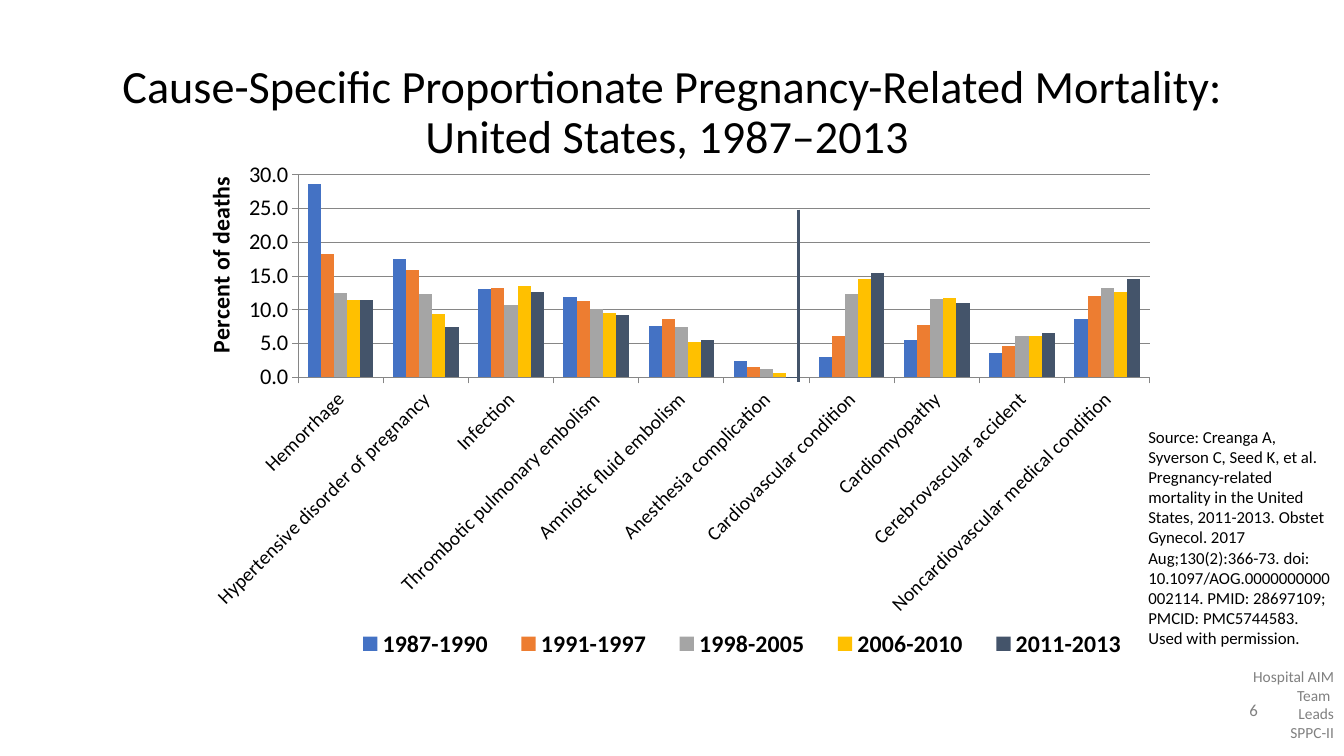
import lxml.etree
import pptx
import pptx.chart.data
import pptx.dml.color
import pptx.enum.chart
import pptx.enum.shapes
import pptx.enum.text
import pptx.oxml
import pptx.oxml.ns
import pptx.util

WIDTH, HEIGHT = pptx.util.Inches(13.33), pptx.util.Inches(7.5)
FONT = "Calibri"
COLORS = {"text": "000000", "muted": "808080", "grid": "868686", "divider": "44546A"}
ALIGN = pptx.enum.text.PP_ALIGN
MIDDLE = pptx.enum.text.MSO_ANCHOR.MIDDLE

CAUSES = [
    "Hemorrhage", "Hypertensive disorder of pregnancy", "Infection",
    "Thrombotic pulmonary embolism", "Amniotic fluid embolism",
    "Anesthesia complication", "Cardiovascular condition", "Cardiomyopathy",
    "Cerebrovascular accident", "Noncardiovascular medical condition",
]
PERIODS = {
    "1987-1990": ("4472C4", [28.7, 17.6, 13.1, 11.9, 7.6, 2.5, 3, 5.6, 3.6, 8.7]),
    "1991-1997": ("ED7D31", [18.2, 15.9, 13.2, 11.3, 8.6, 1.6, 6.2, 7.7, 4.7, 12]),
    "1998-2005": ("A5A5A5", [12.5, 12.3, 10.7, 10.2, 7.5, 1.2, 12.4, 11.6, 6.2, 13.2]),
    "2006-2010": ("FFC000", [11.4, 9.4, 13.6, 9.6, 5.3, 0.7, 14.6, 11.8, 6.2, 12.7]),
    "2011-2013": ("44546A", [11.4, 7.4, 12.7, 9.2, 5.5, 0.1, 15.5, 11, 6.6, 14.5]),
}
TITLE = ("Cause-Specific Proportionate Pregnancy-Related Mortality: "
         "United States, 1987–2013 ")
SOURCE = ("Source: Creanga A, Syverson C, Seed K, et al. Pregnancy-related mortality "
          "in the United States, 2011-2013. Obstet Gynecol. 2017 Aug;130(2):366-73. "
          "doi: 10.1097/AOG.0000000000002114. PMID: 28697109; PMCID: PMC5744583. "
          "Used with permission.")


def rgb(value):
    """Turn a hex string into a colour."""
    return pptx.dml.color.RGBColor.from_string(value)


def place(left, top, width, height):
    """Turn percentages of the slide into lengths."""
    return (int(WIDTH * left / 100), int(HEIGHT * top / 100),
            int(WIDTH * width / 100), int(HEIGHT * height / 100))


def style(font, size, color="text", bold=False):
    """Set the look of a font."""
    font.name, font.size, font.bold = FONT, pptx.util.Pt(size), bold
    font.color.rgb = rgb(COLORS[color])


def write(frame, lines, size, color="text", align=ALIGN.LEFT):
    """Fill a text frame with one paragraph per line."""
    frame.word_wrap = True
    frame.text = "\n".join(lines)
    for para in frame.paragraphs:
        para.alignment = align
        style(para.font, size, color)


def add_title(page):
    """Move and fill the title placeholder."""
    title = page.shapes.title
    title.left, title.top, title.width, title.height = place(6.9, 5.33, 86.27, 19.33)
    write(title.text_frame, [TITLE], 33, align=ALIGN.CENTER)
    title.text_frame.vertical_anchor = MIDDLE
    title.text_frame.paragraphs[0].line_spacing = 0.9


def add_text(page, area, lines, size, color="text", align=ALIGN.LEFT):
    """Add a text box and return its frame."""
    frame = page.shapes.add_textbox(*place(*area)).text_frame
    write(frame, lines, size, color, align)
    return frame


def set_layout(parent, position, inner=False, **shares):
    """Fix a chart part at shares of the chart's size."""
    qn = pptx.oxml.ns.qn
    for old in parent.findall(qn("c:layout")):
        parent.remove(old)
    layout = lxml.etree.Element(qn("c:layout"))
    manual = lxml.etree.SubElement(layout, qn("c:manualLayout"))
    settings = {"layoutTarget": "inner"} if inner else {}
    settings.update(xMode="edge", yMode="edge", **shares)
    for name, value in settings.items():
        lxml.etree.SubElement(manual, qn("c:" + name)).set("val", str(value))
    parent.insert(position, layout)


def style_axis(axis, size):
    """Set the labels, ticks and line of an axis."""
    style(axis.tick_labels.font, size)
    axis.major_tick_mark = pptx.enum.chart.XL_TICK_MARK.OUTSIDE
    axis.minor_tick_mark = pptx.enum.chart.XL_TICK_MARK.NONE
    axis.format.line.color.rgb = rgb(COLORS["grid"])


def style_value_axis(axis):
    """Set the scale, gridlines and title of the value axis."""
    style_axis(axis, 16)
    axis.minimum_scale, axis.maximum_scale, axis.major_unit = 0, 30, 5
    axis.tick_labels.number_format = "#,##0.0"
    axis.tick_labels.number_format_is_linked = False
    axis.major_gridlines.format.line.color.rgb = rgb(COLORS["grid"])
    frame = axis.axis_title.text_frame
    frame.text = "Percent of deaths"
    style(frame.paragraphs[0].font, 17, bold=True)
    set_layout(frame._txBody.getparent().getparent(), 1, x=0.01, y=0.05)


def add_mortality_chart(page):
    """Add the clustered columns of causes by period."""
    data = pptx.chart.data.CategoryChartData()
    data.categories = CAUSES
    for period, (_, values) in PERIODS.items():
        data.add_series(period, values)
    kind = pptx.enum.chart.XL_CHART_TYPE.COLUMN_CLUSTERED
    chart = page.shapes.add_chart(kind, *place(14.1, 19.33, 73.44, 68.93), data).chart
    style(chart.font, 18)
    chart.has_title = False
    plot = chart.plots[0]
    plot.gap_width, plot.overlap, plot.vary_by_categories = 150, 0, False
    for series, (color, _) in zip(plot.series, PERIODS.values()):
        series.format.fill.solid()
        series.format.fill.fore_color.rgb = rgb(color)
    style_axis(chart.category_axis, 14)
    labels = chart.category_axis._element.find(pptx.oxml.ns.qn("c:txPr"))
    labels.find(pptx.oxml.ns.qn("a:bodyPr")).set("rot", "-2700000")
    style_value_axis(chart.value_axis)
    chart.has_legend = True
    chart.legend.position = pptx.enum.chart.XL_LEGEND_POSITION.BOTTOM
    chart.legend.include_in_layout = False
    style(chart.legend.font, 17, bold=True)
    set_layout(chart.legend._element, 1, x=0.15, y=0.92, w=0.82, h=0.07)
    area = chart._chartSpace.chart.plotArea
    set_layout(area, 0, inner=True, x=0.11, y=0.055, w=0.863, h=0.389)


def add_divider(page, column, top, bottom):
    """Draw the vertical line between the two groups of causes."""
    left, start, _, length = place(column, top, 0, bottom - top)
    line = page.shapes.add_connector(
        pptx.enum.shapes.MSO_CONNECTOR.STRAIGHT, left, start, left, start + length)
    line.line.color.rgb = rgb(COLORS["divider"])
    line.line.width = pptx.util.Pt(2.75)
    lxml.etree.SubElement(line._element.spPr, pptx.oxml.ns.qn("a:effectLst"))


def main():
    """Build the slide and save it."""
    deck = pptx.Presentation()
    deck.slide_width, deck.slide_height = WIDTH, HEIGHT
    page = deck.slides.add_slide(deck.slide_layouts.get_by_name("Title Only"))
    add_text(page, (91.3, 87.6, 8.7, 11.2),
             ["Hospital AIM Team ", "Leads", "SPPC-II"], 11, "muted", ALIGN.RIGHT)
    add_title(page)
    add_mortality_chart(page)
    add_divider(page, 59.41, 27.73, 50.53)
    number = add_text(page, (91.52, 91.2, 3.53, 5.33), ["6"], 12, "muted", ALIGN.CENTER)
    number.vertical_anchor = MIDDLE
    add_text(page, (84.7, 55.73, 15.3, 30.93), [SOURCE], 12)
    deck.save("out.pptx")


if __name__ == "__main__":
    main()
